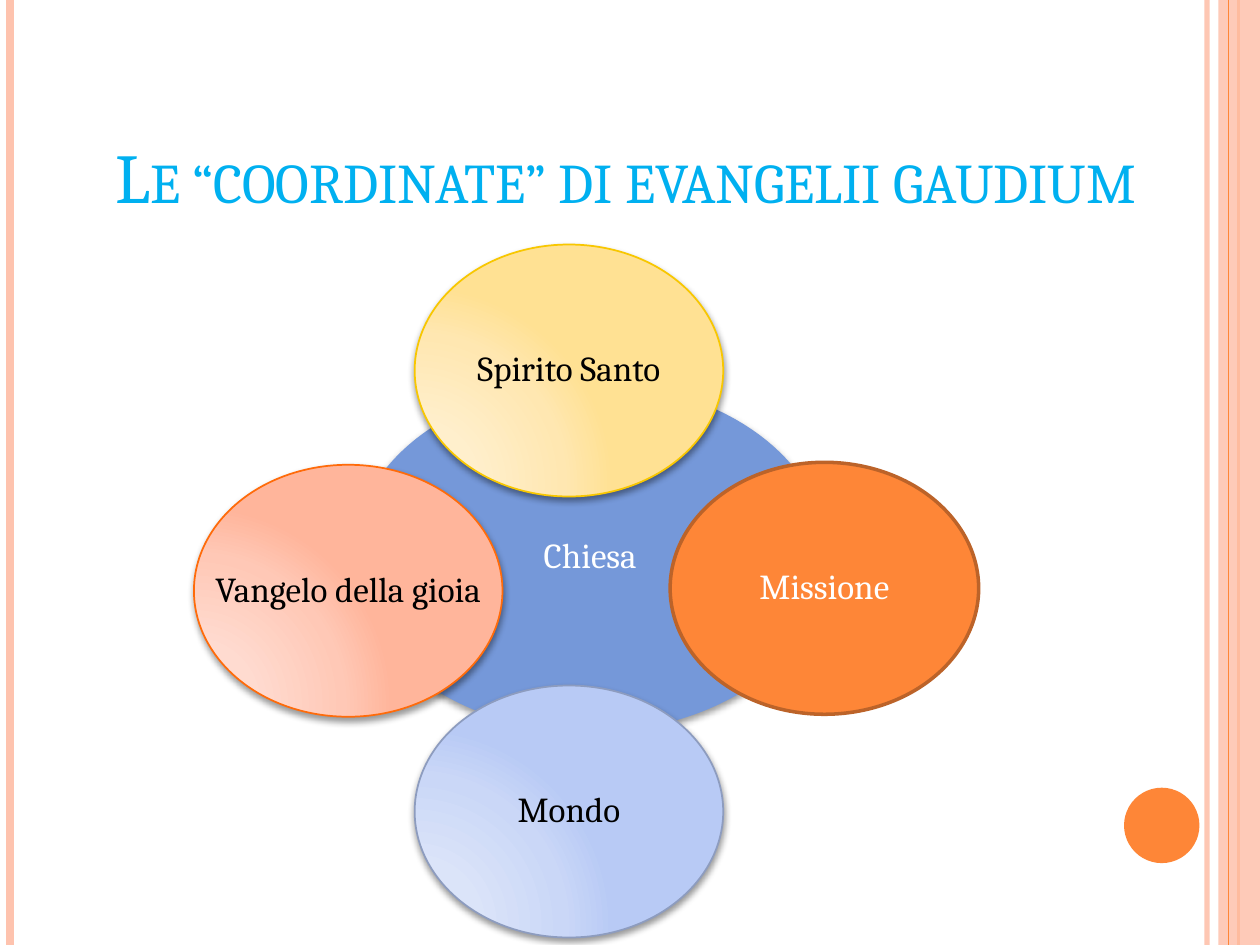
import pptx
import pptx.util
import pptx.dml.color
import pptx.enum.shapes
import pptx.enum.text
import pptx.oxml
import pptx.oxml.ns

Cm, Pt = pptx.util.Cm, pptx.util.Pt
RGBColor = pptx.dml.color.RGBColor
SHAPE = pptx.enum.shapes.MSO_SHAPE
qn = pptx.oxml.ns.qn

FONT = "Cambria"
WIDTH, HEIGHT = 25.4, 19.05
PETAL_SIZE = (6.22, 5.08)

WHITE = RGBColor(0xFF, 0xFF, 0xFF)
BLACK = RGBColor(0x00, 0x00, 0x00)
CYAN = RGBColor(0x00, 0xB0, 0xF0)
PEACH = RGBColor(0xFE, 0xC3, 0xAE)
ORANGE = RGBColor(0xFE, 0x86, 0x37)
BROWN = RGBColor(0xBC, 0x63, 0x29)
BLUE = RGBColor(0x75, 0x98, 0xD9)
YELLOW_EDGE = RGBColor(0xF8, 0xC7, 0x00)
BLUE_EDGE = RGBColor(0x8D, 0x9C, 0xBF)
RED_EDGE = RGBColor(0xFF, 0x6B, 0x0A)

# Gradient colours, from the glow at the lower left outwards
GLOW_STOPS = (0, 30, 75, 100)
YELLOW_GLOW = [RGBColor(0xFF, 0xF0, 0xD1), RGBColor(0xFF, 0xEF, 0xCC),
               RGBColor(0xFF, 0xE7, 0xB1), RGBColor(0xFF, 0xE1, 0x93)]
BLUE_GLOW = [RGBColor(0xDE, 0xE6, 0xFA), RGBColor(0xDB, 0xE4, 0xF9),
             RGBColor(0xCA, 0xD7, 0xF7), RGBColor(0xB8, 0xCA, 0xF5)]
RED_GLOW = [RGBColor(0xFF, 0xDE, 0xD5), RGBColor(0xFF, 0xDB, 0xD0),
            RGBColor(0xFF, 0xC8, 0xB6), RGBColor(0xFF, 0xB5, 0x9B)]


def set_alpha(properties, percent):
    color = next(properties.iter(qn("a:srgbClr")))
    pptx.oxml.ns  # namespace map used by the qualified names
    alpha = color.makeelement(qn("a:alpha"), {"val": str(percent * 1000)})
    color.append(alpha)


def add_rail(slide, x, color, width, alpha=None):
    """Vertical line over the whole slide height."""
    rail = slide.shapes.add_connector(
        pptx.enum.shapes.MSO_CONNECTOR.STRAIGHT, Cm(x), 0, Cm(x), Cm(HEIGHT))
    rail.line.color.rgb = color
    rail.line.width = Pt(width)
    properties = rail._element.spPr
    if alpha:
        set_alpha(properties, alpha)
    properties.append(properties.makeelement(qn("a:effectLst"), {}))


def add_plain(slide, kind, left, top, width, height, color):
    shape = slide.shapes.add_shape(kind, Cm(left), Cm(top), Cm(width), Cm(height))
    shape.shadow.inherit = False
    shape.fill.solid()
    shape.fill.fore_color.rgb = color
    shape.line.fill.background()
    return shape


def set_glow(shape, colors):
    """Circular gradient that starts at the lower left."""
    stops = "".join(
        f'<a:gs pos="{stop * 1000}"><a:srgbClr val="{color}"/></a:gs>'
        for stop, color in zip(GLOW_STOPS, colors))
    shape.fill.gradient()
    properties = shape._element.spPr
    properties.replace(properties.find(qn("a:gradFill")), pptx.oxml.parse_xml(
        f'<a:gradFill {pptx.oxml.ns.nsdecls("a")} rotWithShape="1">'
        f'<a:gsLst>{stops}</a:gsLst><a:path path="circle">'
        '<a:fillToRect l="5000" t="100000" r="120000" b="10000"/>'
        '</a:path></a:gradFill>'))


def add_shadow(shape):
    shape._element.spPr.find(qn("a:effectLst")).append(pptx.oxml.parse_xml(
        f'<a:outerShdw {pptx.oxml.ns.nsdecls("a")} blurRad="{Pt(4)}" '
        f'dist="{Pt(2)}" dir="5400000" rotWithShape="0">'
        '<a:srgbClr val="000000"><a:alpha val="40000"/></a:srgbClr>'
        '</a:outerShdw>'))


def add_circle(slide, label, center, size, color, text_color,
               glow=None, edge=None, edge_width=1, shadow=True):
    """Labelled ellipse placed by its centre."""
    left, top = (c - s / 2 for c, s in zip(center, size))
    circle = add_plain(slide, SHAPE.OVAL, left, top, *size, color)
    if glow:
        set_glow(circle, glow)
    if edge:
        circle.line.color.rgb = edge
        circle.line.width = Pt(edge_width)
    if shadow:
        add_shadow(circle)
    frame = circle.text_frame
    frame.word_wrap = False
    frame.vertical_anchor = pptx.enum.text.MSO_ANCHOR.MIDDLE
    frame.margin_left = frame.margin_right = Cm(0.03)
    frame.margin_top = frame.margin_bottom = Cm(0.03)
    paragraph = write(frame, label, 20, text_color)
    paragraph.line_spacing = 0.9


def write(frame, text, size, color):
    frame.text = text
    paragraph = frame.paragraphs[0]
    paragraph.alignment = pptx.enum.text.PP_ALIGN.CENTER
    paragraph.font.name = FONT
    paragraph.font.size = Pt(size)
    paragraph.font.color.rgb = color
    return paragraph


def set_title(slide, text):
    title = slide.shapes.title
    title.left, title.top, title.width, title.height = (
        Cm(1.09), Cm(1.12), Cm(23.04), Cm(3.4))
    frame = title.text_frame
    frame.word_wrap = True
    frame.auto_size = pptx.enum.text.MSO_AUTO_SIZE.NONE
    frame.vertical_anchor = pptx.enum.text.MSO_ANCHOR.BOTTOM
    paragraph = write(frame, text, 40, CYAN)
    paragraph.font._element.set("cap", "small")


def add_frame(slide):
    """Side rails, right band and corner disc."""
    add_rail(slide, 24.33, PEACH, 3, alpha=93)
    add_rail(slide, 0.2, PEACH, 4.5)
    add_rail(slide, 24.97, ORANGE, 1.5)
    band = add_plain(slide, SHAPE.RECTANGLE, 24.56, 0, WIDTH - 24.56, HEIGHT, PEACH)
    set_alpha(band._element.spPr, 87)
    add_rail(slide, 24.77, ORANGE, 0.75)
    add_plain(slide, SHAPE.OVAL, 22.66, 15.88, 1.52, 1.52, ORANGE)


def main():
    deck = pptx.Presentation()
    deck.slide_width, deck.slide_height = Cm(WIDTH), Cm(HEIGHT)
    slide = deck.slides.add_slide(deck.slide_layouts[5])
    add_frame(slide)
    set_title(slide, "Le “coordinate” di evangelii gaudium")

    # Hub, then the four petals around it
    add_circle(slide, "Chiesa", (11.9, 11.24), (9.58, 7.04), BLUE, WHITE)
    add_circle(slide, "Spirito Santo", (11.47, 7.47), PETAL_SIZE,
               YELLOW_GLOW[-1], BLACK, YELLOW_GLOW, YELLOW_EDGE)
    add_circle(slide, "Missione", (16.62, 11.86), PETAL_SIZE,
               ORANGE, WHITE, edge=BROWN, edge_width=2, shadow=False)
    add_circle(slide, "Mondo", (11.47, 16.36), PETAL_SIZE,
               BLUE_GLOW[-1], BLACK, BLUE_GLOW, BLUE_EDGE)
    add_circle(slide, "Vangelo della gioia", (7.02, 11.91), PETAL_SIZE,
               RED_GLOW[-1], BLACK, RED_GLOW, RED_EDGE)
    deck.save("out.pptx")


if __name__ == "__main__":
    main()
